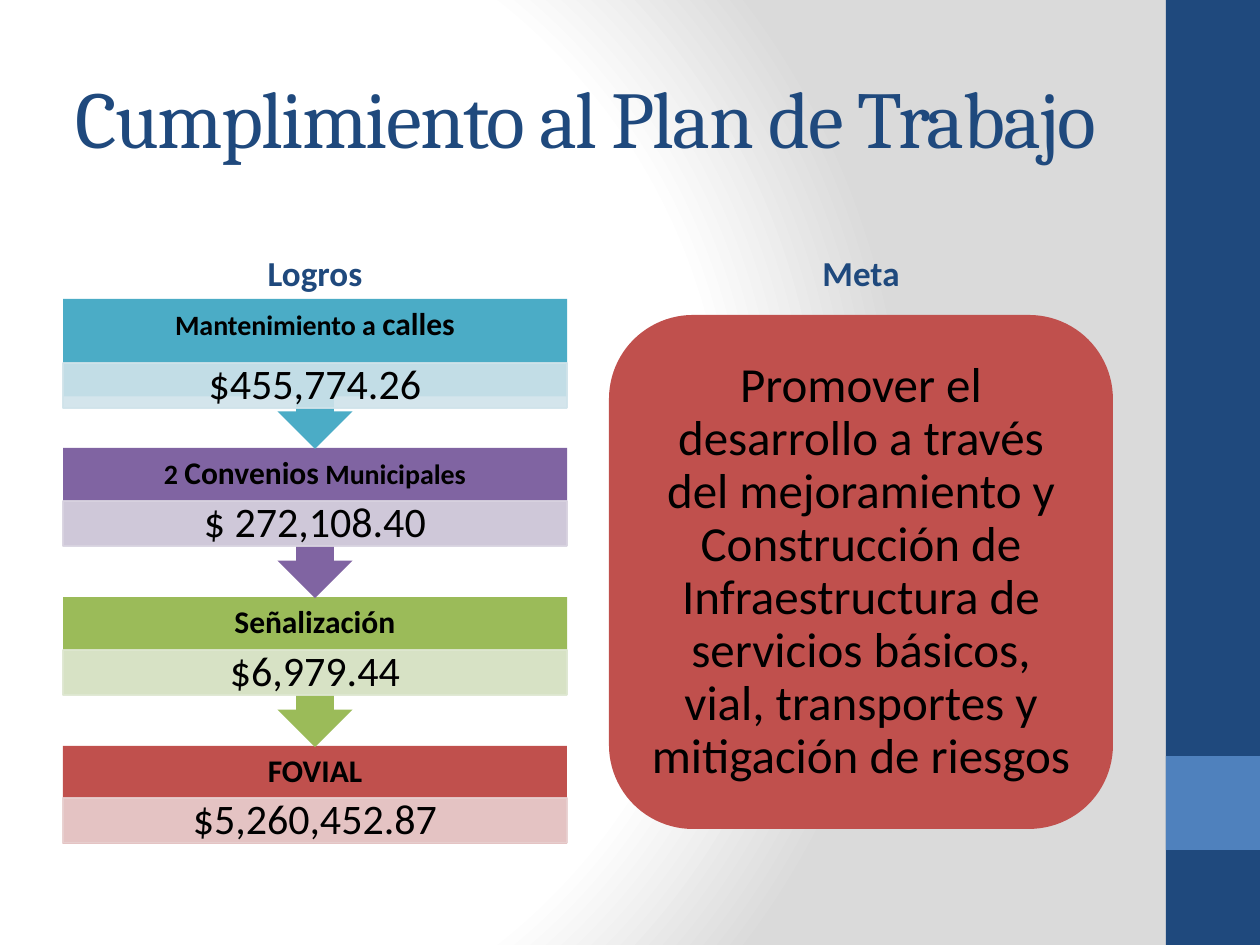
from pptx import Presentation
from pptx.dml.color import RGBColor
from pptx.enum.shapes import MSO_SHAPE as Shape
from pptx.enum.text import MSO_ANCHOR as Anchor, MSO_AUTO_SIZE as AutoSize, PP_ALIGN as Align
from pptx.oxml import parse_xml
from pptx.oxml.ns import nsdecls, qn
from pptx.oxml.xmlchemy import OxmlElement
from pptx.util import Pt

SCALE = 914400 / 126
NAVY, BLUE, RED, BLACK = "1F497D", "4F81BD", "C0504D", "000000"
LEFT, WIDTH, META_LEFT = 63, 504, 609
FIRST_TOP, PITCH = 299, 149

STEPS = [
    ([("Mantenimiento a ", 16), ("calles", 18)], "$455,774.26", "4BACC6", "D0E3EA", 64),
    ([("2 ", 16), ("Convenios", 18), (" Municipales", 16)], "$ 272,108.40", "8064A2", "D8D3E0", 53),
    ([("Señalización", 18)], "$6,979.44", "9BBB59", "DEE7D1", 53),
    ([("FOVIAL", 18)], "$5,260,452.87", RED, "E8D0D0", 52),
]
GOAL = (
    "Promover el desarrollo a través del mejoramiento y Construcción de "
    "Infraestructura de servicios básicos, vial, transportes y mitigación de riesgos"
)


def px(length):
    return round(length * SCALE)


def rgb(code):
    return RGBColor.from_string(code)


def set_all(target, values):
    for name, value in values.items():
        setattr(target, name, value)


def place(box, area):
    set_all(box, dict(zip(("left", "top", "width", "height"), map(px, area))))


def write(box, spans, color=BLACK, face="Calibri", bold=False, align=Align.CENTER,
          anchor=Anchor.MIDDLE, spacing=0.9, insets=(13, 6)):
    frame = box.text_frame
    across, down = map(px, insets)
    set_all(frame, {
        "word_wrap": True, "auto_size": AutoSize.NONE, "vertical_anchor": anchor,
        "margin_left": across, "margin_right": across,
        "margin_top": down, "margin_bottom": down,
    })
    para = frame.paragraphs[0]
    set_all(para, {"alignment": align, "line_spacing": spacing})
    for text, size in spans:
        span = para.add_run()
        span.text = text
        set_all(span.font, {"name": face, "size": Pt(size), "bold": bold})
        span.font.color.rgb = rgb(color)


def add_box(page, kind, area, color):
    box = page.shapes.add_shape(kind, *map(px, area))
    box.shadow.inherit = False
    box.fill.solid()
    box.fill.fore_color.rgb = rgb(color)
    box.line.fill.background()
    return box


def add_value(page, area, text, color):
    box = add_box(page, Shape.RECTANGLE, area, color)
    box.line.color.rgb = rgb(color)
    box.line.width = Pt(1)
    for tint in box.element.spPr.iter(qn("a:srgbClr")):
        alpha = OxmlElement("a:alpha")
        alpha.set("val", "90000")
        tint.append(alpha)
    write(box, [(text, 24)], insets=(24, 4))


def add_step(page, index, spans, value, color, tint, value_offset):
    top = FIRST_TOP + PITCH * index
    if index == len(STEPS) - 1:
        add_box(page, Shape.RECTANGLE, (LEFT, top, WIDTH, 98), color)
    else:
        callout = add_box(page, Shape.UP_ARROW_CALLOUT, (LEFT, top, WIDTH, 150), color)
        callout.rotation = 180
    heading = page.shapes.add_textbox(*map(px, (LEFT, top, WIDTH, 53)))
    write(heading, spans, bold=True, insets=(16, 16))
    add_value(page, (LEFT, top + value_offset, WIDTH, 45), value, tint)


def set_background(page):
    page.background.fill.solid()
    solid = page.element.find(".//" + qn("p:bgPr")).find(qn("a:solidFill"))
    stops = "".join(
        f'<a:gs pos="{position}000"><a:srgbClr val="{color}"/></a:gs>'
        for position, color in ((0, "FFFFFF"), (75, "FFFFFF"), (100, "DADADA"))
    )
    gradient = parse_xml(
        f'<a:gradFill rotWithShape="1" {nsdecls("a")}><a:gsLst>{stops}</a:gsLst>'
        '<a:path path="circle"><a:fillToRect l="20000" t="50000" r="100000" b="50000"/>'
        "</a:path></a:gradFill>"
    )
    solid.getparent().replace(solid, gradient)


def fill_placeholders(page):
    holders = {holder.placeholder_format.idx: holder for holder in page.placeholders}
    title = holders.pop(0)
    place(title, (LEFT, 38, 1050, 157))
    write(title, [("Cumplimiento al Plan de Trabajo", 46)], NAVY, "Cambria",
          align=Align.LEFT, spacing=1.0)
    title.text_frame.paragraphs[0].runs[0].font._element.set("spc", "-100")
    for index, text, left in ((1, "Logros", LEFT), (3, "Meta", META_LEFT)):
        label = holders.pop(index)
        place(label, (left, 212, WIDTH, 88))
        write(label, [(text, 20)], NAVY, bold=True, anchor=Anchor.BOTTOM, spacing=1.0)
    for unused in holders.values():
        unused.element.getparent().remove(unused.element)


def main():
    deck = Presentation()
    set_all(deck, {"slide_width": px(1260), "slide_height": px(945)})
    page = deck.slides.add_slide(deck.slide_layouts[4])
    set_background(page)
    fill_placeholders(page)
    add_box(page, Shape.RECTANGLE, (1166, 0, 94, 945), NAVY)
    add_box(page, Shape.RECTANGLE, (1166, 756, 94, 94), BLUE)
    for index in reversed(range(len(STEPS))):
        add_step(page, index, *STEPS[index])
    goal = add_box(page, Shape.ROUNDED_RECTANGLE, (META_LEFT, 315, WIDTH, 514), RED)
    write(goal, [(GOAL, 28)], insets=(15, 15))
    deck.save("out.pptx")


if __name__ == "__main__":
    main()
